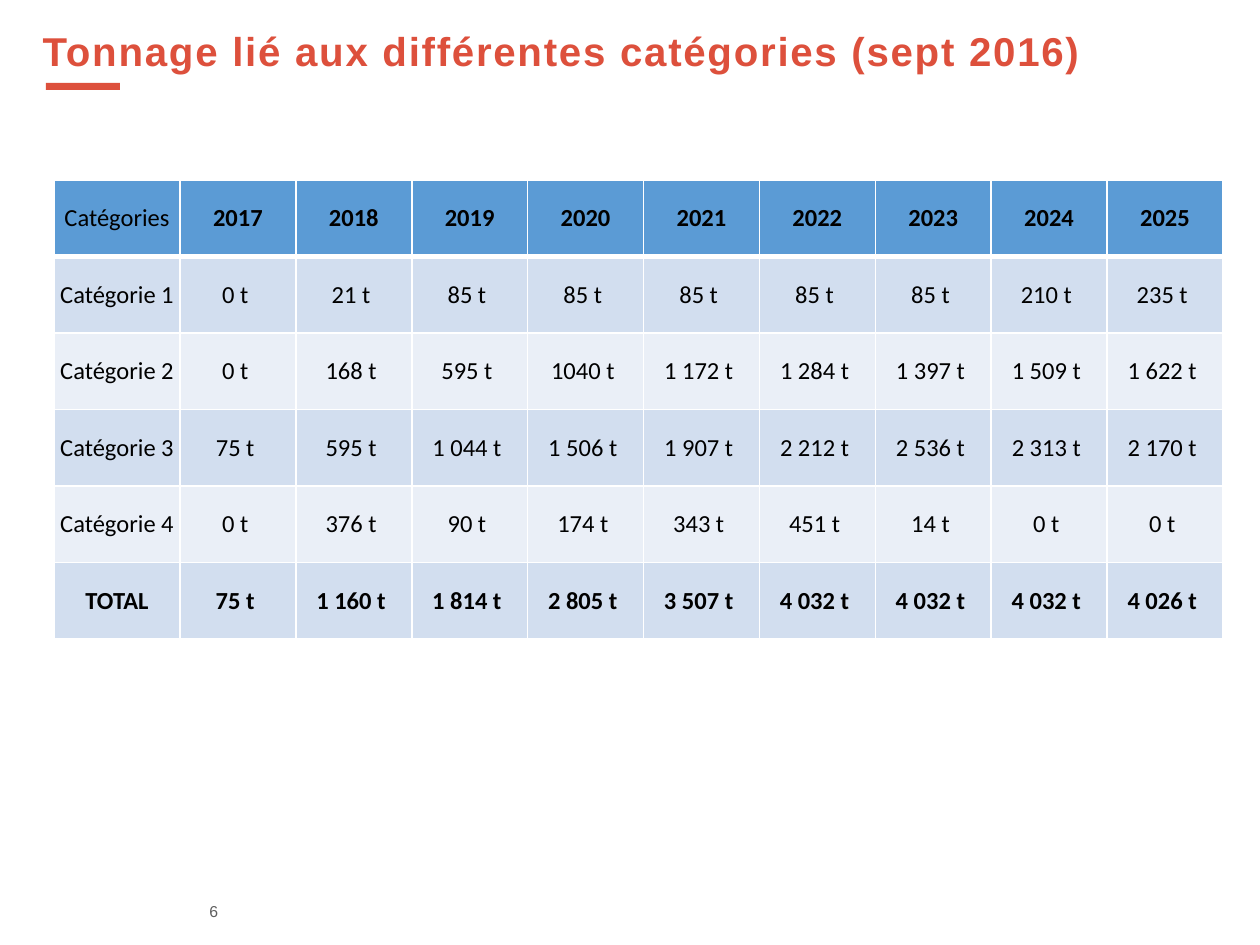
import dataclasses

import lxml.etree
import pptx
import pptx.dml.color
import pptx.enum.shapes
import pptx.enum.text
import pptx.oxml.ns
import pptx.util

UNIT = 914400 / 126
ALIGN = pptx.enum.text.PP_ALIGN
ANCHOR = pptx.enum.text.MSO_ANCHOR
YEARS = range(2017, 2026)
ROWS = {
    "Catégorie 1": ["0", "21", "85", "85", "85", "85", "85", "210", "235"],
    "Catégorie 2": ["0", "168", "595", "1040", "1 172", "1 284", "1 397", "1 509", "1 622"],
    "Catégorie 3": ["75", "595", "1 044", "1 506", "1 907", "2 212", "2 536", "2 313", "2 170"],
    "Catégorie 4": ["0", "376", "90", "174", "343", "451", "14", "0", "0"],
    "TOTAL": ["75", "1 160", "1 814", "2 805", "3 507", "4 032", "4 032", "4 032", "4 026"],
}


@dataclasses.dataclass(frozen=True)
class Theme:
    red: str = "DD503C"
    blue: str = "5B9BD5"
    bands: tuple = ("D2DEEF", "EAEFF7")
    white: str = "FFFFFF"
    black: str = "000000"
    grey: str = "5F5F5F"
    head: str = "Arial"
    body: str = "Calibri"
    title: int = 23
    cell: int = 14
    foot: int = 9


THEME = Theme()


def px(num):
    return pptx.util.Emu(round(num * UNIT))


def rgb(code):
    return pptx.dml.color.RGBColor.from_string(code)


def apply(item, form):
    for name, value in form.items():
        setattr(item, name, value)


def place(item, box):
    apply(item, dict(zip(("left", "top", "width", "height"), map(px, box))))


def write(para, text, face, size, tint, bold=False):
    run = para.add_run()
    run.text = text
    apply(run.font, {"name": face, "size": pptx.util.Pt(size), "bold": bold})
    run.font.color.rgb = rgb(tint)
    return run


def add_title(slide, box):
    left, top, width, height = box
    title = slide.shapes.title
    place(title, box)
    apply(title.text_frame, {"word_wrap": True, "vertical_anchor": ANCHOR.TOP,
                             "auto_size": pptx.enum.text.MSO_AUTO_SIZE.NONE})
    para = title.text_frame.paragraphs[0]
    apply(para, {"alignment": ALIGN.LEFT, "line_spacing": 0.9})
    run = write(para, "Tonnage lié aux différentes catégories (sept 2016)",
                THEME.head, THEME.title, THEME.red, True)
    run.font._element.set("spc", "100")
    bar = slide.shapes.add_shape(pptx.enum.shapes.MSO_SHAPE.RECTANGLE,
                                 px(left + 16), px(top + 58), px(74), px(7))
    bar.shadow.inherit = False
    bar.fill.solid()
    bar.fill.fore_color.rgb = rgb(THEME.red)
    bar.line.fill.background()


def edge(cell, sides):
    props = cell._tc.get_or_add_tcPr()
    for spot, (side, width) in enumerate(sides.items()):
        line = lxml.etree.Element(pptx.oxml.ns.qn("a:ln" + side),
                                  w=str(pptx.util.Pt(width)))
        fill = lxml.etree.SubElement(line, pptx.oxml.ns.qn("a:solidFill"))
        lxml.etree.SubElement(fill, pptx.oxml.ns.qn("a:srgbClr"), val=THEME.white)
        props.insert(spot, line)


def add_grid(slide, box):
    lines = [["Catégories", *map(str, YEARS)]]
    lines += [[name, *(f"{num} t " for num in nums)] for name, nums in ROWS.items()]
    table = slide.shapes.add_table(len(lines), len(lines[0]), *map(px, box)).table
    first = 126
    step = (box[2] - first) / len(YEARS)
    for col, column in enumerate(table.columns):
        column.width = px(step if col else first)
    for row, line in enumerate(lines):
        tint = THEME.bands[(row - 1) % 2] if row else THEME.blue
        for col, text in enumerate(line):
            cell = table.cell(row, col)
            apply(cell, {"margin_left": 0, "margin_right": 0, "margin_top": 0,
                         "margin_bottom": 0, "vertical_anchor": ANCHOR.MIDDLE})
            cell.fill.solid()
            cell.fill.fore_color.rgb = rgb(tint)
            edge(cell, {"L": 1, "R": 1, "T": 3 if row == 1 else 1,
                        "B": 1 if row else 3})
            para = cell.text_frame.paragraphs[0]
            para.alignment = ALIGN.CENTER
            bold = line[0] == "TOTAL" or (row == 0 and col > 0)
            write(para, text, THEME.body, THEME.cell, THEME.black, bold)


def add_foot(slide, box):
    frame = slide.shapes.add_textbox(*map(px, box)).text_frame
    apply(frame, {"word_wrap": True, "vertical_anchor": ANCHOR.MIDDLE,
                  "margin_top": 0, "margin_bottom": 0})
    write(frame.paragraphs[0], "6", THEME.head, THEME.foot, THEME.grey)


def main():
    deck = pptx.Presentation()
    apply(deck, {"slide_width": px(1260), "slide_height": px(945)})
    slide = deck.slides.add_slide(deck.slide_layouts[5])
    add_title(slide, (30, 25, 1087, 91))
    add_grid(slide, (54, 180, 1169, 459))
    add_foot(slide, (197, 900, 47, 23))
    deck.save("out.pptx")


if __name__ == "__main__":
    main()
